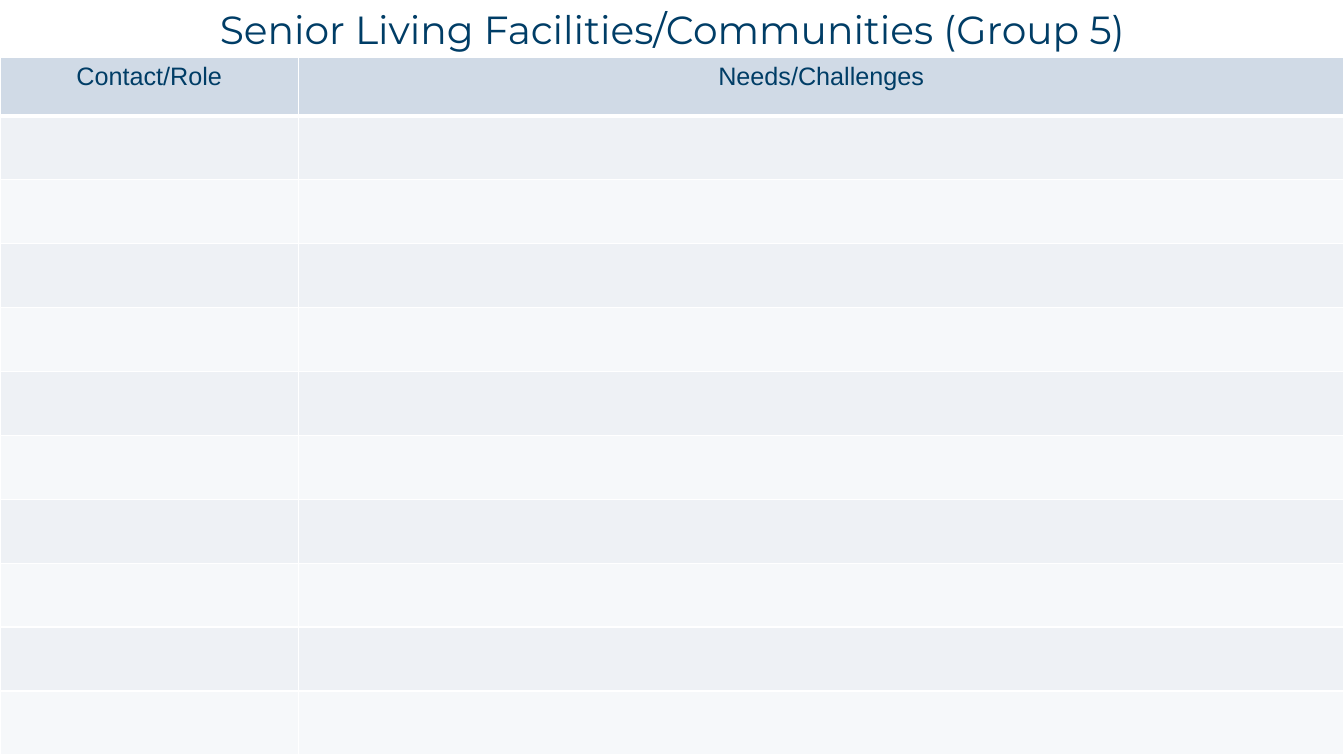
from lxml.etree import SubElement
from pptx import Presentation
from pptx.dml.color import RGBColor
from pptx.enum.text import MSO_ANCHOR, MSO_AUTO_SIZE, PP_ALIGN
from pptx.oxml.ns import qn
from pptx.util import Cm, Pt

COLORS = {
    "navy": "003D66",
    "header": "D0DAE6",
    "odd": "EEF1F5",
    "even": "F6F8FA",
    "grid": "FFFFFF",
}
HEADINGS = ("Contact/Role", "Needs/Challenges")
COLUMN_WIDTHS = (7.52, 26.35)
HEADER_HEIGHT = 1.47
ENTRY_HEIGHT = 1.61
ENTRY_COUNT = 10


class GroupSlide:
    def __init__(self, deck):
        self.slide = deck.slides.add_slide(deck.slide_layouts[5])
        self.title_format = {"name": "Montserrat", "size": Pt(28), "bold": False}
        self.heading_format = {"name": "Arial", "size": Pt(18), "bold": False}

    def label(self, frame, text, font_format):
        frame.text = text
        paragraph = frame.paragraphs[0]
        paragraph.alignment = PP_ALIGN.CENTER
        font = paragraph.runs[0].font
        for attribute, value in font_format.items():
            setattr(font, attribute, value)
        font.color.rgb = RGBColor.from_string(COLORS["navy"])

    def title(self, text, left, top, width, height):
        heading = self.slide.shapes.title
        place = {"left": left, "top": top, "width": width, "height": height}
        for attribute, value in place.items():
            setattr(heading, attribute, Cm(value))
        frame = heading.text_frame
        layout = {
            "word_wrap": True,
            "auto_size": MSO_AUTO_SIZE.NONE,
            "vertical_anchor": MSO_ANCHOR.TOP,
        }
        for attribute, value in layout.items():
            setattr(frame, attribute, value)
        self.label(frame, text, self.title_format)

    def borders(self, cell, widths):
        properties = cell._tc.get_or_add_tcPr()
        for position, (side, width) in enumerate(widths.items()):
            line = SubElement(properties, qn(f"a:{side}"), w=str(Pt(width)))
            fill = SubElement(line, qn("a:solidFill"))
            SubElement(fill, qn("a:srgbClr"), val=COLORS["grid"])
            properties.insert(position, line)

    def table(self, left, top):
        heights = [HEADER_HEIGHT] + [ENTRY_HEIGHT] * ENTRY_COUNT
        frame = self.slide.shapes.add_table(
            len(heights), len(HEADINGS), Cm(left), Cm(top),
            Cm(sum(COLUMN_WIDTHS)), Cm(sum(heights)),
        )
        contacts = frame.table
        for column, width in zip(contacts.columns, COLUMN_WIDTHS):
            column.width = Cm(width)
        for index, (row, height) in enumerate(zip(contacts.rows, heights)):
            row.height = Cm(height)
            shade = "header" if index == 0 else ("even", "odd")[index % 2]
            widths = {
                "lnL": 1,
                "lnR": 1,
                "lnT": 3 if index == 1 else 1,
                "lnB": 3 if index == 0 else 1,
            }
            for cell in row.cells:
                cell.fill.solid()
                cell.fill.fore_color.rgb = RGBColor.from_string(COLORS[shade])
                self.borders(cell, widths)
        for cell, heading in zip(contacts.rows[0].cells, HEADINGS):
            self.label(cell.text_frame, heading, self.heading_format)


def main():
    deck = Presentation()
    deck.slide_width = Cm(33.87)
    deck.slide_height = Cm(19.05)
    group = GroupSlide(deck)
    group.title("Senior Living Facilities/Communities (Group 5)", 4.06, 0, 25.76, 2.24)
    group.table(0, 1.45)
    deck.save("out.pptx")


if __name__ == "__main__":
    main()
